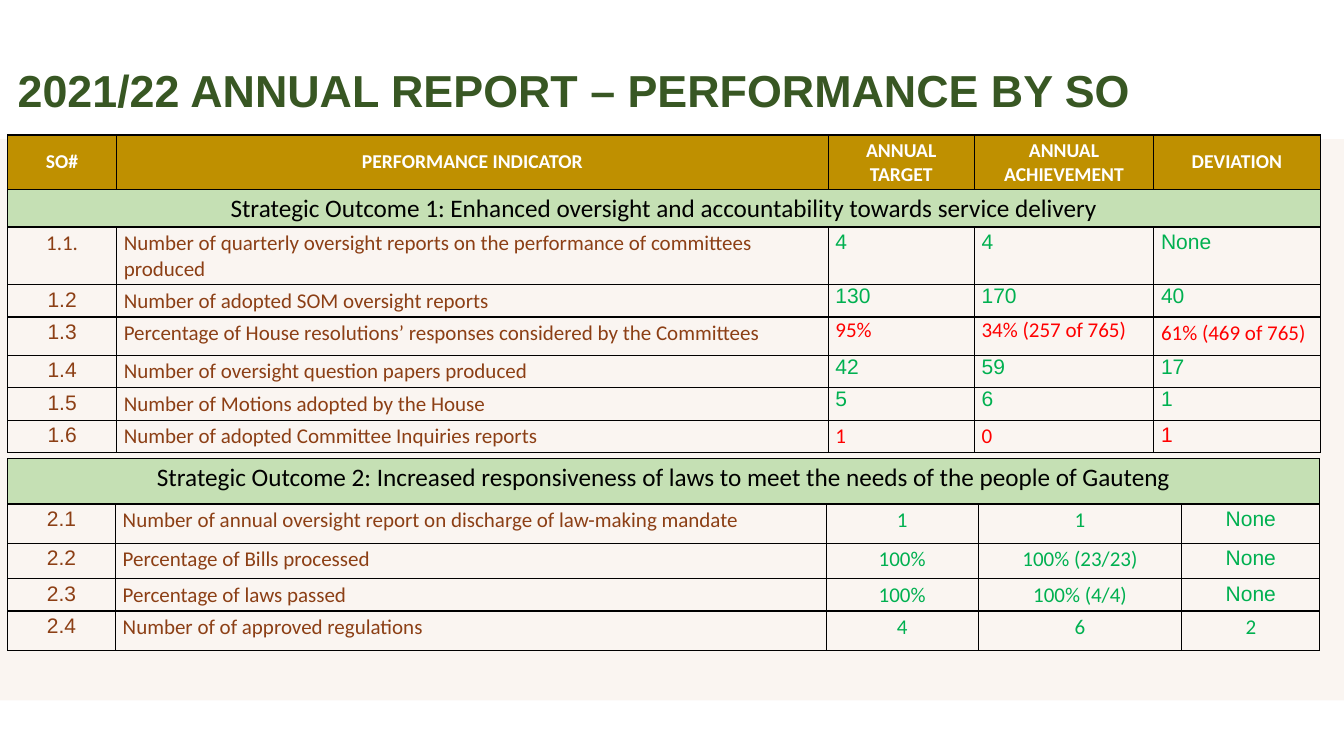
from lxml import etree
from pptx import Presentation
from pptx.dml.color import RGBColor
from pptx.enum import shapes, text
from pptx.oxml.ns import qn
from pptx.util import Pt

CREAM = RGBColor(0xFA, 0xF5, 0xF1)
DARK_GREEN = RGBColor(0x38, 0x57, 0x23)
GOLD = RGBColor(0xBF, 0x90, 0x00)
PALE_GREEN = RGBColor(0xC5, 0xE0, 0xB4)
BROWN = RGBColor(0x8C, 0x3F, 0x15)
GREEN = RGBColor(0x00, 0xB0, 0x50)
RED = RGBColor(0xFF, 0x00, 0x00)
WHITE = RGBColor(0xFF, 0xFF, 0xFF)
BLACK = RGBColor(0x00, 0x00, 0x00)
ARIAL, CALIBRI = "Arial", "Calibri"
LEFT, CENTER = text.PP_ALIGN.LEFT, text.PP_ALIGN.CENTER
TOP, MIDDLE = text.MSO_ANCHOR.TOP, text.MSO_ANCHOR.MIDDLE
PAD = 2.6

HEADINGS = ["SO#", "PERFORMANCE INDICATOR", "ANNUAL TARGET", "ANNUAL ACHIEVEMENT", "DEVIATION"]

# Each indicator: height, number, its font, wording, colour of values,
# values, their fonts, their top and bottom padding
OVERSIGHT = [
    (31, "1.1.", CALIBRI, "Number of quarterly oversight reports on the performance of committees produced",
     GREEN, ["4", "4", "None"], [ARIAL] * 3, [PAD] * 3),
    (22.3, "1.2", ARIAL, "Number of adopted SOM oversight reports",
     GREEN, ["130", "170", "40"], [ARIAL] * 3, [0] * 3),
    (27.4, "1.3", ARIAL, "Percentage of House resolutions’ responses considered by the Committees",
     RED, ["95%", "34% (257 of 765)", "61% (469 of 765)"], [CALIBRI] * 3, [0, 0, PAD]),
    (23, "1.4", ARIAL, "Number of oversight question papers produced",
     GREEN, ["42", "59", "17"], [ARIAL] * 3, [0] * 3),
    (22.3, "1.5", ARIAL, "Number of Motions adopted by the House",
     GREEN, ["5", "6", "1"], [ARIAL] * 3, [0] * 3),
    (22.3, "1.6", ARIAL, "Number of adopted Committee Inquiries reports",
     RED, ["1", "0", "1"], [CALIBRI, CALIBRI, ARIAL], [PAD] * 3),
]
LAWS = [
    (28.1, "2.1", ARIAL, "Number of annual oversight report on discharge of law-making mandate",
     GREEN, ["1", "1", "None"], [CALIBRI, CALIBRI, ARIAL], [PAD] * 3),
    (25.2, "2.2", ARIAL, "Percentage of Bills processed",
     GREEN, ["100%", "100% (23/23)", "None"], [CALIBRI, CALIBRI, ARIAL], [PAD] * 3),
    (23, "2.3", ARIAL, "Percentage of laws passed",
     GREEN, ["100%", "100% (4/4)", "None"], [CALIBRI, CALIBRI, ARIAL], [PAD] * 3),
    (28.1, "2.4", ARIAL, "Number of of approved regulations",
     GREEN, ["4", "6", "2"], [CALIBRI] * 3, [0] * 3),
]
# Each table: top, column widths, heading height, band height, band wording,
# indicators, alignment of values
TABLES = [
    (96.5, [77.8, 508.3, 104.4, 128.2, 118.8], 37.4, 25.9,
     "Strategic Outcome 1: Enhanced oversight and accountability towards service delivery",
     OVERSIGHT, LEFT),
    (327.6, [77, 507.6, 108.7, 145.4, 98.6], None, 32.4,
     "Strategic Outcome 2: Increased responsiveness of laws to meet the needs of the people of Gauteng",
     LAWS, CENTER),
]


def write(paragraph, wording, align, **font_values):
    paragraph.alignment = align
    span = paragraph.add_run()
    span.text = wording
    span.font.color.rgb = font_values.pop("color")
    for name, value in font_values.items():
        setattr(span.font, name, value)


def style_cell(cell, fill=None, anchor=TOP, pad=PAD):
    """Set fill, padding and a thin black border on every side."""
    frame_values = {"vertical_anchor": anchor, "margin_left": Pt(5.2), "margin_right": Pt(5.2),
                    "margin_top": Pt(pad), "margin_bottom": Pt(pad)}
    for name, value in frame_values.items():
        setattr(cell, name, value)
    if fill is None:
        cell.fill.background()
    else:
        cell.fill.solid()
        cell.fill.fore_color.rgb = fill
    properties = cell._tc.get_or_add_tcPr()
    for place, side in enumerate(["a:lnL", "a:lnR", "a:lnT", "a:lnB"]):
        line = etree.Element(qn(side), w=str(Pt(1)))
        solid = etree.SubElement(line, qn("a:solidFill"))
        etree.SubElement(solid, qn("a:srgbClr"), val=str(BLACK))
        properties.insert(place, line)


deck = Presentation()
deck.slide_width, deck.slide_height = Pt(960), Pt(540)
page = deck.slides.add_slide(deck.slide_layouts[6])

panel = page.shapes.add_shape(shapes.MSO_SHAPE.RECTANGLE, Pt(0), Pt(99.4), Pt(960), Pt(401))
panel.shadow.inherit = False
panel.fill.solid()
panel.fill.fore_color.rgb = CREAM
panel.line.fill.background()

title = page.shapes.add_textbox(Pt(5.5), Pt(32.4), Pt(954.5), Pt(67.7)).text_frame
title.word_wrap = True
title.vertical_anchor = MIDDLE
title.paragraphs[0].line_spacing = 0.9
write(title.paragraphs[0], "2021/22 ANNUAL REPORT – PERFORMANCE BY SO", LEFT,
      name=ARIAL, size=Pt(32), bold=True, color=DARK_GREEN)

for top, widths, heading_height, band_height, outcome, indicators, value_align in TABLES:
    heights = [band_height] + [indicator[0] for indicator in indicators]
    if heading_height:
        heights.insert(0, heading_height)
    table = page.shapes.add_table(len(heights), len(widths), Pt(5.5), Pt(top),
                                  Pt(sum(widths)), Pt(sum(heights))).table
    table.first_row = table.horz_banding = False
    for column, width in zip(table.columns, widths):
        column.width = Pt(width)
    for row, height in zip(table.rows, heights):
        row.height = Pt(height)

    band_row = 0
    if heading_height:
        band_row = 1
        for cell, heading in zip(table.rows[0].cells, HEADINGS):
            style_cell(cell, GOLD, MIDDLE)
            write(cell.text_frame.paragraphs[0], heading, CENTER,
                  name=CALIBRI, size=Pt(14), bold=True, color=WHITE)

    band = table.cell(band_row, 0)
    band.merge(table.cell(band_row, 4))
    for cell in table.rows[band_row].cells:
        style_cell(cell, PALE_GREEN, MIDDLE if heading_height else TOP)
    write(band.text_frame.paragraphs[0], outcome, CENTER,
          name=CALIBRI, size=Pt(18), bold=False, color=BLACK)

    for row, indicator in enumerate(indicators, band_row + 1):
        _, number, number_font, wording, value_color, values, fonts, pads = indicator
        entries = [(number, number_font, BROWN, PAD, CENTER), (wording, CALIBRI, BROWN, PAD, LEFT)]
        entries += [(value, font, value_color, pad, value_align)
                    for value, font, pad in zip(values, fonts, pads)]
        for cell, (entry, font, color, pad, align) in zip(table.rows[row].cells, entries):
            style_cell(cell, pad=pad)
            paragraph = cell.text_frame.paragraphs[0]
            write(paragraph, entry, align, name=font, size=Pt(15), bold=False, color=color)
            if number == "2.4" and pad == 0:
                paragraph.line_spacing = 1.15

last_value = table.cell(len(table.rows) - 1, 4).text_frame.paragraphs[0]
last_value.space_after = Pt(10)

deck.save("out.pptx")
